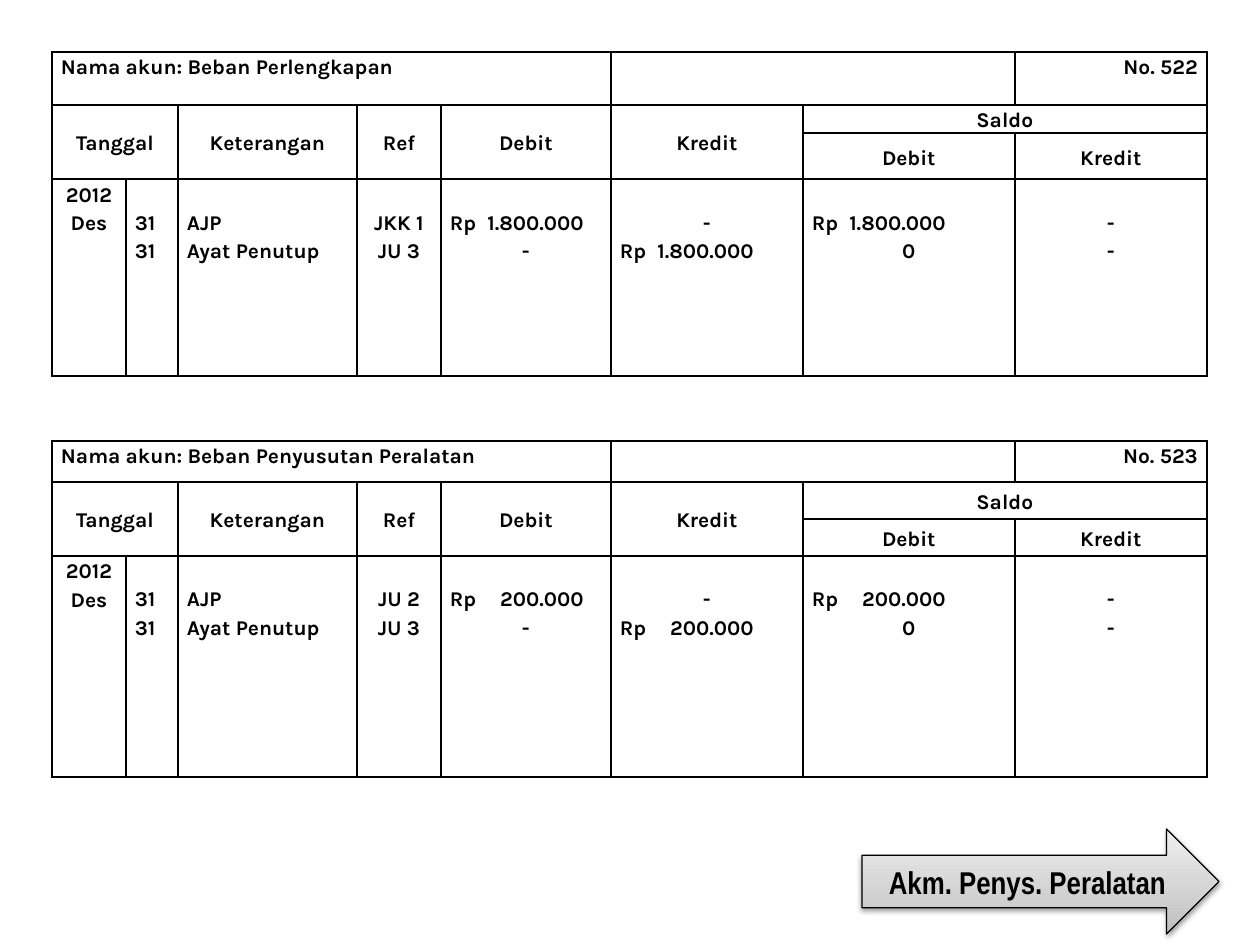
from dataclasses import dataclass

from lxml import etree
from pptx import Presentation, util as u
from pptx.dml.color import RGBColor
from pptx.enum import shapes, text
from pptx.oxml.ns import qn

PX = 914400 / 126
BLACK = "000000"
LEFT, MID, RIGHT = text.PP_ALIGN.LEFT, text.PP_ALIGN.CENTER, text.PP_ALIGN.RIGHT
TOP, HALF = text.MSO_ANCHOR.TOP, text.MSO_ANCHOR.MIDDLE
COLS = [74, 52, 179, 84, 170, 192, 212, 192]
PAD, LINE, AMOUNT = 9, 28, 134
# row, column, rows spanned, columns spanned, label
HEADS = [
    (1, 0, 2, 2, "Tanggal"),
    (1, 2, 2, 1, "Keterangan"),
    (1, 3, 2, 1, "Ref"),
    (1, 4, 2, 1, "Debit"),
    (1, 5, 2, 1, "Kredit"),
    (1, 6, 1, 2, "Saldo"),
    (2, 6, 1, 1, "Debit"),
    (2, 7, 1, 1, "Kredit"),
]


@dataclass
class Ledger:
    name: str
    code: str
    ref: str
    sum: str
    top: int
    rows: list[int]


LEDGERS = [
    Ledger("Beban Perlengkapan", "522", "JKK 1", "1.800.000", 52, [53, 28, 46, 197]),
    Ledger("Beban Penyusutan Peralatan", "523", "JU 2", "200.000", 441, [41, 37, 37, 221]),
]


def px(n: float) -> int:
    return u.Emu(round(n * PX))


def color(code: str) -> RGBColor:
    return RGBColor.from_string(code)


def add(parent, tag: str, **attrs):
    return etree.SubElement(parent, qn(tag), {k: str(v) for k, v in attrs.items()})


def write(frame, *lines: str, align=LEFT, font="Karla", size=12, space=1.15) -> None:
    """Put one paragraph per line; a tab moves an amount to a right-hand stop."""
    for i, line in enumerate(lines):
        para = frame.paragraphs[0] if i == 0 else frame.add_paragraph()
        para.alignment = align
        para.line_spacing = space
        if "\t" in line:
            tabs = add(para._p.get_or_add_pPr(), "a:tabLst")
            add(tabs, "a:tab", pos=px(AMOUNT), algn="r")
            para.alignment = LEFT
        run = para.add_run()
        run.text = line
        run.font.name, run.font.size, run.font.bold = font, u.Pt(size), True
        run.font.color.rgb = color(code=BLACK)


def frame_cell(cell) -> None:
    """Draw a black border round an unfilled cell and set its margins."""
    props = cell._tc.get_or_add_tcPr()
    for side in ("a:lnL", "a:lnR", "a:lnT", "a:lnB"):
        edge = add(props, side, w=u.Pt(1))
        add(add(edge, "a:solidFill"), "a:srgbClr", val=BLACK)
    cell.fill.background()
    cell.margin_left = cell.margin_right = px(PAD)
    cell.margin_top = cell.margin_bottom = 0


def draw_ledger(slide, book: Ledger) -> None:
    holder = slide.shapes.add_table(
        len(book.rows), len(COLS), px(52), px(book.top), px(sum(COLS)), px(sum(book.rows)))
    grid = holder.table
    grid.first_row = grid.horz_banding = False
    for col, wide in zip(grid.columns, COLS):
        col.width = px(wide)
    for row, high in zip(grid.rows, book.rows):
        row.height = px(high)
    for cell in grid.iter_cells():
        frame_cell(cell)

    def put(row: int, col: int, *lines: str, down=1, over=1, align=MID, anchor=TOP):
        cell = grid.cell(row, col)
        if down * over > 1:
            cell.merge(grid.cell(row + down - 1, col + over - 1))
        cell.vertical_anchor = anchor
        write(cell.text_frame, *lines, align=align)
        return cell

    put(0, 0, f"Nama akun: {book.name}", over=5, align=LEFT)
    put(0, 5, over=2)
    put(0, 7, f"No. {book.code}", align=RIGHT)
    for row, col, down, over, label in HEADS:
        put(row, col, label, down=down, over=over, anchor=HALF)

    put(3, 0, "2012", "Des")
    money = f"Rp\t{book.sum}"
    entries = [
        (LEFT, "31", "31"),
        (LEFT, "AJP", "Ayat Penutup"),
        (MID, book.ref, "JU 3"),
        (MID, money, "-"),
        (MID, "-", money),
        (MID, money, "0"),
        (MID, "-", "-"),
    ]
    for col, (align, *lines) in enumerate(entries, 1):
        put(3, col, *lines, align=align).margin_top = px(LINE)


def draw_arrow(slide) -> None:
    arrow = slide.shapes.add_shape(
        shapes.MSO_SHAPE.RIGHT_ARROW, px(862), px(829), px(357), px(105))
    arrow.fill.gradient()
    arrow.fill.gradient_angle = 90
    props = arrow._element.spPr
    stops = props.find(".//" + qn("a:gsLst"))
    stops.clear()
    for pos, code in ((0, "BDBDBD"), (35, "D1D1D1"), (100, "EEEEEE")):
        add(add(stops, "a:gs", pos=pos * 1000), "a:srgbClr", val=code)
    arrow.line.color.rgb = color(BLACK)
    arrow.line.width = u.Pt(0.75)
    arrow.shadow.inherit = False
    shade = add(props.find(qn("a:effectLst")), "a:outerShdw", blurRad=u.Pt(3.1),
                dist=u.Pt(1.6), dir=5400000, rotWithShape=0)
    add(add(shade, "a:srgbClr", val=BLACK), "a:alpha", val=38000)
    arrow.text_frame.vertical_anchor = HALF
    write(arrow.text_frame, "Akm. Penys. Peralatan", align=MID,
          font="Arial Narrow", size=18, space=1.0)


def main() -> None:
    deck = Presentation()
    deck.slide_width, deck.slide_height = px(1260), px(945)
    slide = deck.slides.add_slide(deck.slide_layouts[6])
    for book in LEDGERS:
        draw_ledger(slide, book)
    draw_arrow(slide)
    deck.save("out.pptx")


if __name__ == "__main__":
    main()
